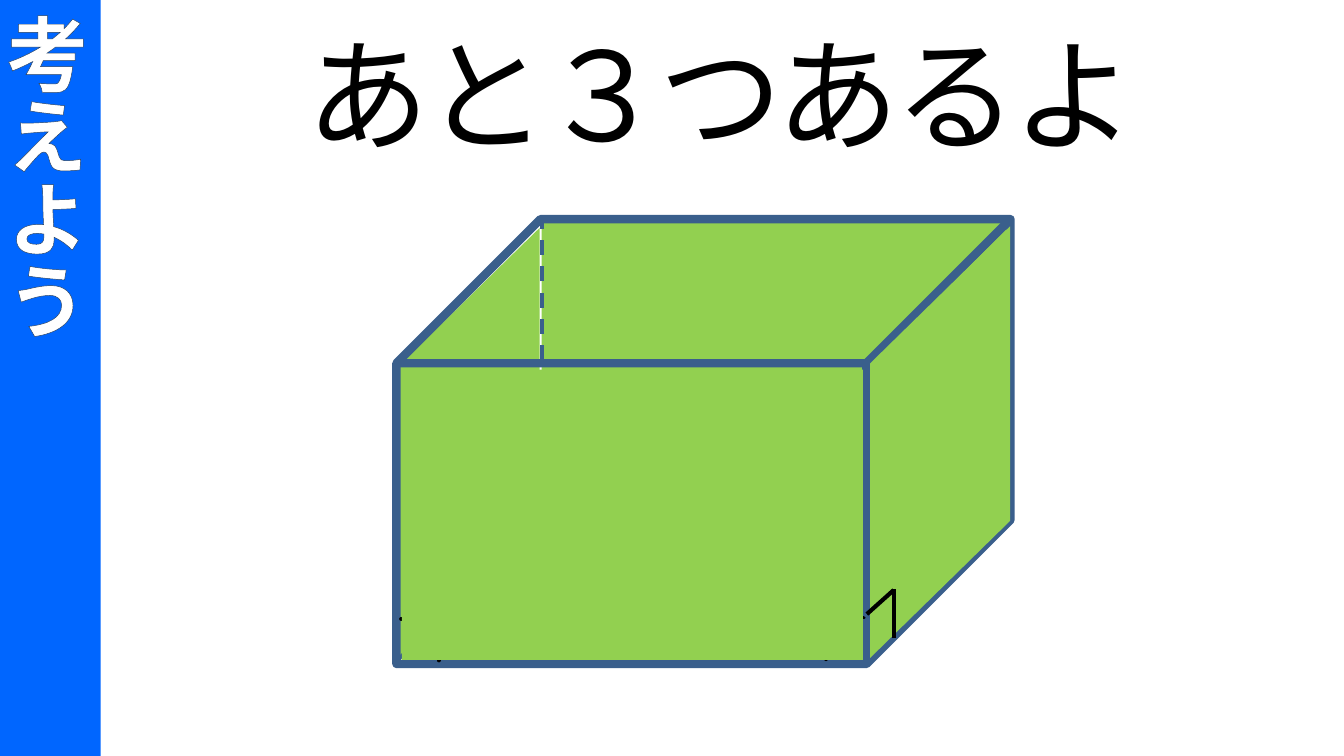
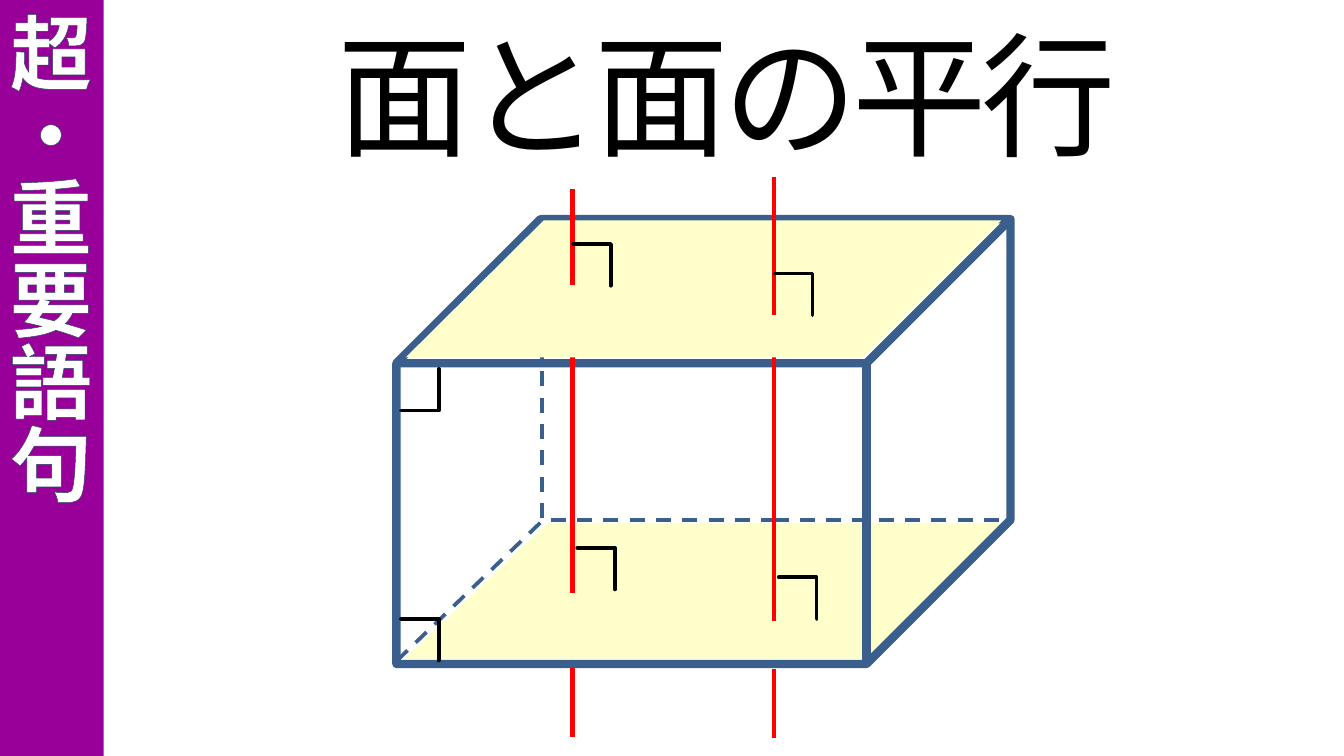
"""Build two lesson slides about the faces of a box."""
from dataclasses import dataclass
from typing import Optional

import lxml.etree
import pptx
import pptx.dml.color
import pptx.enum.dml
import pptx.enum.shapes
import pptx.enum.text
import pptx.oxml.ns
import pptx.util

Pt = pptx.util.Pt
RGBColor = pptx.dml.color.RGBColor
Shape = pptx.enum.shapes.MSO_SHAPE
Anchor = pptx.enum.text.MSO_ANCHOR
qn = pptx.oxml.ns.qn

FONT = "Noto Sans CJK JP"
WHITE = RGBColor(0xFF, 0xFF, 0xFF)
BLACK = RGBColor(0, 0, 0)
BLUE = RGBColor(0x00, 0x66, 0xFF)
PURPLE = RGBColor(0x99, 0x00, 0x99)
GREEN = RGBColor(0x92, 0xD0, 0x50)
CREAM = RGBColor(0xFF, 0xFF, 0xCC)
RED = RGBColor(0xFF, 0, 0)
EDGE = RGBColor(0x3A, 0x5F, 0x8C)
OUTLINE = RGBColor(0x25, 0x40, 0x61)


@dataclass(frozen=True)
class Solid:
    """A preset shape, measured in points."""
    kind: Shape
    left: float
    top: float
    width: float
    height: float
    fill: Optional[RGBColor] = None
    line: Optional[RGBColor] = None
    weight: float = 2
    dashed: bool = False
    adjust: tuple[float, ...] = ()
    turn: float = 0
    flip: str = ""


@dataclass(frozen=True)
class Stroke:
    """A straight line, measured in points."""
    x1: float
    y1: float
    x2: float
    y2: float
    color: RGBColor
    weight: float = 2.25
    dashed: bool = False


def slanted(left: float, top: float, width: float, height: float,
            fill: RGBColor, slant: float) -> Solid:
    """Describe a horizontal face."""
    return Solid(Shape.PARALLELOGRAM, left, top, width, height, fill, adjust=(slant,))


def side_face(left: float, top: float) -> Solid:
    """Describe a green face at the left or right of the box."""
    return Solid(Shape.PARALLELOGRAM, left, top, 231.1, 74.9, GREEN,
                 adjust=(0.979,), turn=90, flip="flipV")


def right_angle(left: float, top: float, flip: str = "") -> Solid:
    """Describe a right angle mark."""
    return Solid(Shape.HALF_FRAME, left, top, 22.3, 20.2, BLACK, BLACK,
                 adjust=(0, 0), turn=90, flip=flip)


def normal(x: float, top: float, bottom: float) -> Stroke:
    """Describe part of a red line at right angles to the faces."""
    return Stroke(x, top, x, bottom, RED)


BACK_AREA = (290.2, 118.1, 251.3, 160.6)
BACK_FACE = Solid(Shape.RECTANGLE, *BACK_AREA, fill=GREEN)
BACK_EDGES = Solid(Shape.RECTANGLE, *BACK_AREA, line=EDGE, dashed=True)
BOX = Solid(Shape.CUBE, 212.4, 117.4, 329, 238.3, line=EDGE, weight=4.5, adjust=(0.324,))
HIDDEN_EDGE = Stroke(289.4, 280.1, 213.1, 353.5, EDGE, 2, True)
FRONT_CORNER = right_angle(213.8, 332.6)
NORMAL_LEFT, NORMAL_RIGHT = 306.7, 414.7

THINK_BEHIND = (
    BACK_FACE,
    side_face(136.1, 200.2),
    slanted(212.4, 280.1, 324.7, 75.6, CREAM, 1.029),
    BACK_EDGES,
)
THINK_FRONT = (
    BOX,
    HIDDEN_EDGE,
    right_angle(441.4, 331.9, "flipV"),
    side_face(388.1, 199.4),
    FRONT_CORNER,
    Solid(Shape.RECTANGLE, 215.3, 198, 247, 155.5, GREEN),
    Stroke(464.4, 329, 478.8, 316.1, BLACK),
    Stroke(478.8, 342, 478.8, 315.4, BLACK),
)
PARALLEL_BEHIND = (
    slanted(216.7, 280.1, 324.7, 72.7, CREAM, 1.055),
    BACK_EDGES,
)
PARALLEL_FRONT = (
    BOX,
    HIDDEN_EDGE,
    FRONT_CORNER,
    right_angle(213.8, 198.7, "flipH"),
    normal(NORMAL_LEFT, 101.5, 317.5),
    normal(NORMAL_LEFT, 357.8, 394.6),
    right_angle(308.2, 294.5),
    normal(NORMAL_RIGHT, 117.4, 332.6),
    slanted(217.4, 118.1, 319, 73.4, CREAM, 1.007),
    normal(NORMAL_RIGHT, 358.6, 395.3),
    right_angle(416.2, 310.3),
    normal(NORMAL_RIGHT, 95, 168.5),
    right_angle(414, 147.6),
    normal(NORMAL_LEFT, 115.9, 152.6),
    right_angle(306, 131.8),
)


def style_line(line, color: RGBColor, weight: float, dashed: bool) -> None:
    """Set colour, width and dash of a line."""
    line.color.rgb = color
    line.width = Pt(weight)
    if dashed:
        line.dash_style = pptx.enum.dml.MSO_LINE.DASH


def draw_solid(page, item: Solid):
    """Draw a preset shape."""
    shape = page.shapes.add_shape(item.kind, Pt(item.left), Pt(item.top),
                                  Pt(item.width), Pt(item.height))
    shape.shadow.inherit = False
    for index, value in enumerate(item.adjust):
        shape.adjustments[index] = value
    if item.fill is None:
        shape.fill.background()
    else:
        shape.fill.solid()
        shape.fill.fore_color.rgb = item.fill
    if item.line is None:
        shape.line.fill.background()
    else:
        style_line(shape.line, item.line, item.weight, item.dashed)
    shape.rotation = item.turn
    if item.flip:
        shape.element.spPr.get_or_add_xfrm().set(item.flip, "1")
    return shape


def draw_stroke(page, item: Stroke) -> None:
    """Draw a straight line."""
    stroke = page.shapes.add_connector(pptx.enum.shapes.MSO_CONNECTOR.STRAIGHT,
                                       Pt(item.x1), Pt(item.y1), Pt(item.x2), Pt(item.y2))
    style_line(stroke.line, item.color, item.weight, item.dashed)
    lxml.etree.SubElement(stroke.element.spPr, qn("a:effectLst"))


def draw_all(page, items: tuple) -> None:
    """Draw shapes and lines from back to front."""
    for item in items:
        if isinstance(item, Stroke):
            draw_stroke(page, item)
        else:
            draw_solid(page, item)


def write(frame, text: str, size: float, color: RGBColor):
    """Write one centred paragraph and return it with its run properties."""
    frame.text = text
    para = frame.paragraphs[0]
    para.alignment = pptx.enum.text.PP_ALIGN.CENTER
    span = para.runs[0]
    span.font.size = Pt(size)
    span.font.name = FONT
    span.font.color.rgb = color
    properties = span._r.get_or_add_rPr()
    lxml.etree.SubElement(properties, qn("a:ea")).set("typeface", FONT)
    return para, properties


def draw_title(page, text: str, size: float, left: float, width: float) -> None:
    """Draw the large title."""
    box = page.shapes.add_textbox(Pt(left), Pt(10.1), Pt(width), Pt(79.2))
    frame = box.text_frame
    frame.word_wrap = False
    frame.vertical_anchor = Anchor.MIDDLE
    properties = write(frame, text, size, BLACK)[1]
    properties.set("spc", "-300")


def draw_band(page, text: str, color: RGBColor, left: float, top: float,
              width: float, height: float) -> None:
    """Draw the coloured band with its vertical heading."""
    band = draw_solid(page, Solid(Shape.RECTANGLE, left, top, width, height, color))
    frame = band.text_frame
    frame.margin_left, frame.margin_right = Pt(0), Pt(5.8)
    frame.margin_top = frame.margin_bottom = Pt(3.6)
    frame.vertical_anchor = Anchor.BOTTOM
    frame.auto_size = pptx.enum.text.MSO_AUTO_SIZE.SHAPE_TO_FIT_TEXT
    band.element.txBody.bodyPr.set("vert", "eaVert")
    para, properties = write(frame, text, 44, WHITE)
    para.line_spacing = Pt(50)
    para.runs[0].font.bold = True
    outline = lxml.etree.Element(qn("a:ln"), w=str(Pt(0.75)))
    fill = lxml.etree.SubElement(outline, qn("a:solidFill"))
    lxml.etree.SubElement(fill, qn("a:srgbClr")).set("val", str(OUTLINE))
    properties.insert(0, outline)


def main() -> None:
    """Build and save the deck."""
    deck = pptx.Presentation()
    deck.slide_width, deck.slide_height = Pt(720), Pt(405)
    blank = deck.slide_layouts[6]

    think = deck.slides.add_slide(blank)
    draw_all(think, THINK_BEHIND)
    draw_title(think, "あと３つあるよ", 66, 52.6, 667.4)
    draw_band(think, "考えよう", BLUE, -2.9, 0, 56.9, 406.8)
    draw_all(think, THINK_FRONT)

    parallel = deck.slides.add_slide(blank)
    draw_band(parallel, "超・重要語句", PURPLE, -0.7, -0.7, 56.2, 406.1)
    draw_all(parallel, PARALLEL_BEHIND)
    draw_title(parallel, "面と面の平行", 72, 59.8, 658.8)
    draw_all(parallel, PARALLEL_FRONT)

    deck.save("out.pptx")


if __name__ == "__main__":
    main()
